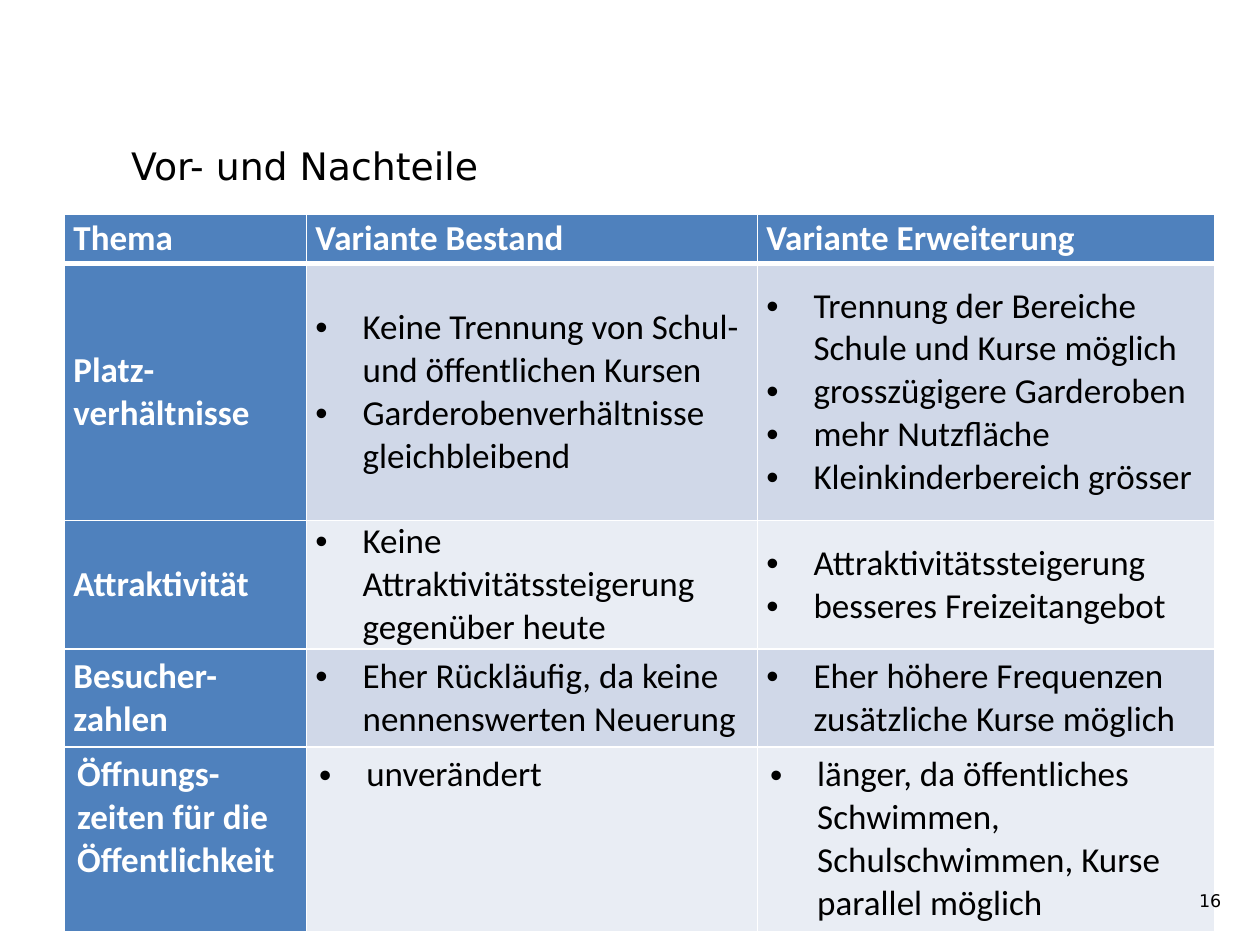
from lxml.etree import SubElement
from pptx import Presentation
from pptx.dml.color import RGBColor
from pptx.enum.text import MSO_ANCHOR, MSO_AUTO_SIZE, PP_ALIGN
from pptx.oxml.ns import qn
from pptx.util import Cm, Pt

COLORS = {
    "text": "000000",
    "light": "FFFFFF",
    "accent": "4F81BD",
    "odd_row": "D0D8E8",
    "even_row": "E9EDF4",
}
HEADINGS = ["Thema", "Variante Bestand", "Variante Erweiterung"]
COMPARISON = [
    ("Platz-verhältnisse",
     ["Keine Trennung von Schul- und öffentlichen Kursen",
      "Garderobenverhältnisse gleichbleibend"],
     ["Trennung der Bereiche Schule und Kurse möglich",
      "grosszügigere Garderoben",
      "mehr Nutzfläche",
      "Kleinkinderbereich grösser"]),
    ("Attraktivität",
     ["Keine Attraktivitätssteigerung gegenüber heute"],
     ["Attraktivitätssteigerung", "besseres Freizeitangebot"]),
    ("Besucher-zahlen",
     ["Eher Rückläufig, da keine nennenswerten Neuerung"],
     ["Eher höhere Frequenzen zusätzliche Kurse möglich"]),
    ("Öffnungs-zeiten für die Öffentlichkeit",
     ["unverändert"],
     ["länger, da öffentliches Schwimmen, Schulschwimmen, Kurse parallel möglich"]),
]
COLUMN_WIDTHS = [4.88, 9.09, 9.22]
ROW_HEIGHTS = [0.99, 5.18, 2.59, 1.98, 3.28]


def set_font(paragraph, name, size, color, bold=False):
    """Format a whole paragraph."""
    font = paragraph.font
    font.name, font.size, font.bold = name, Pt(size), bold
    font.color.rgb = RGBColor.from_string(COLORS[color])


def add_bullet(paragraph):
    """Give a paragraph a bullet with a hanging indent."""
    properties = paragraph._p.get_or_add_pPr()
    properties.set("marL", str(Cm(0.95)))
    properties.set("indent", str(-Cm(0.95)))
    SubElement(properties, qn("a:buFont"), typeface="Arial")
    SubElement(properties, qn("a:buChar"), char="•")


def set_borders(cell, top, bottom):
    """Draw white cell borders with the given top and bottom widths."""
    properties = cell._tc.get_or_add_tcPr()
    for side, width in (("L", 1), ("R", 1), ("T", top), ("B", bottom)):
        line = SubElement(properties, qn(f"a:ln{side}"), w=str(Pt(width)))
        fill = SubElement(line, qn("a:solidFill"))
        SubElement(fill, qn("a:srgbClr"), val=COLORS["light"])


def fill_cell(cell, entries, background, is_label):
    """Write a label or a bulleted list into a cell."""
    cell.fill.solid()
    cell.fill.fore_color.rgb = RGBColor.from_string(COLORS[background])
    cell.text = "\n".join(entries)
    for paragraph in cell.text_frame.paragraphs:
        if not is_label:
            add_bullet(paragraph)
        set_font(paragraph, "Calibri", 20, "light" if is_label else "text", is_label)


def add_title(slide, text):
    """Place and format the slide title."""
    title = slide.shapes.title
    title.left, title.top, title.width, title.height = Cm(2.39), Cm(2.13), Cm(22.5), Cm(1.5)
    frame = title.text_frame
    frame.text = text
    frame.auto_size = MSO_AUTO_SIZE.NONE
    frame.vertical_anchor = MSO_ANCHOR.TOP
    frame.margin_top, frame.margin_bottom = Cm(0.75), 0
    heading = frame.paragraphs[0]
    heading.alignment = PP_ALIGN.LEFT
    set_font(heading, "DejaVu Sans", 21.6, "text")


def add_comparison(slide):
    """Add the table that compares both variants."""
    rows = [[[heading] for heading in HEADINGS]]
    rows += [[[topic], existing, extension] for topic, existing, extension in COMPARISON]
    table = slide.shapes.add_table(
        len(rows), len(HEADINGS), Cm(1.3), Cm(4.32),
        Cm(sum(COLUMN_WIDTHS)), Cm(sum(ROW_HEIGHTS))).table
    for column, width in zip(table.columns, COLUMN_WIDTHS):
        column.width = Cm(width)
    for row, height in zip(table.rows, ROW_HEIGHTS):
        row.height = Cm(height)
    for row_index, row in enumerate(rows):
        band = "odd_row" if row_index % 2 else "even_row"
        for column_index, entries in enumerate(row):
            cell = table.cell(row_index, column_index)
            is_label = row_index == 0 or column_index == 0
            set_borders(cell, 3 if row_index == 1 else 1, 3 if row_index == 0 else 1)
            fill_cell(cell, entries, "accent" if is_label else band, is_label)
            if row_index < len(rows) - 1:
                cell.vertical_anchor = MSO_ANCHOR.MIDDLE
                cell.margin_left = cell.margin_right = Cm(0.18)
                cell.margin_top = cell.margin_bottom = 0


def add_page_number(slide, number):
    """Add the page number at the bottom right."""
    frame = slide.shapes.add_textbox(Cm(18.95), Cm(17.65), Cm(5.92), Cm(1.02)).text_frame
    frame.word_wrap = True
    frame.vertical_anchor = MSO_ANCHOR.MIDDLE
    frame.text = number
    frame.paragraphs[0].alignment = PP_ALIGN.RIGHT
    set_font(frame.paragraphs[0], "DejaVu Sans", 10, "text")


def main():
    """Build and save the slide."""
    presentation = Presentation()
    presentation.slide_width, presentation.slide_height = Cm(25.4), Cm(19.05)
    slide = presentation.slides.add_slide(presentation.slide_layouts[5])
    add_title(slide, "Vor- und Nachteile")
    add_comparison(slide)
    add_page_number(slide, "16")
    presentation.save("out.pptx")


if __name__ == "__main__":
    main()
